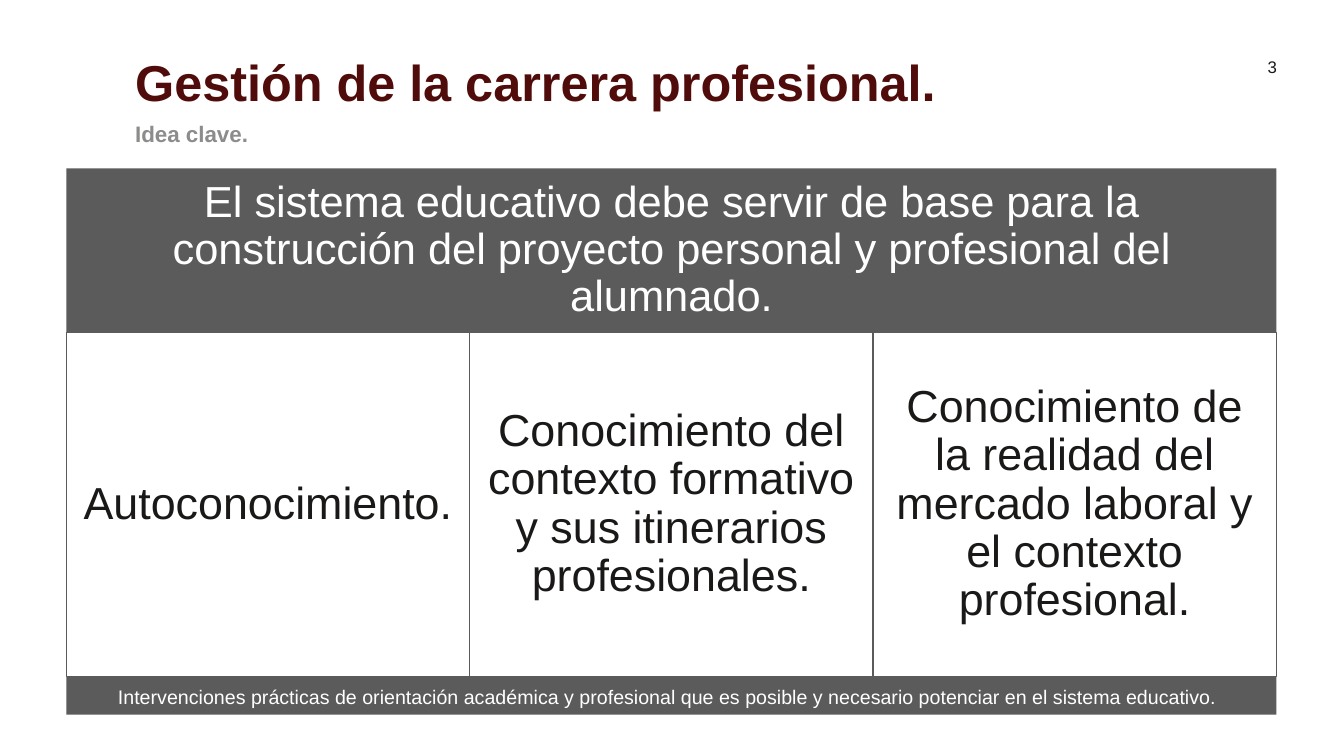
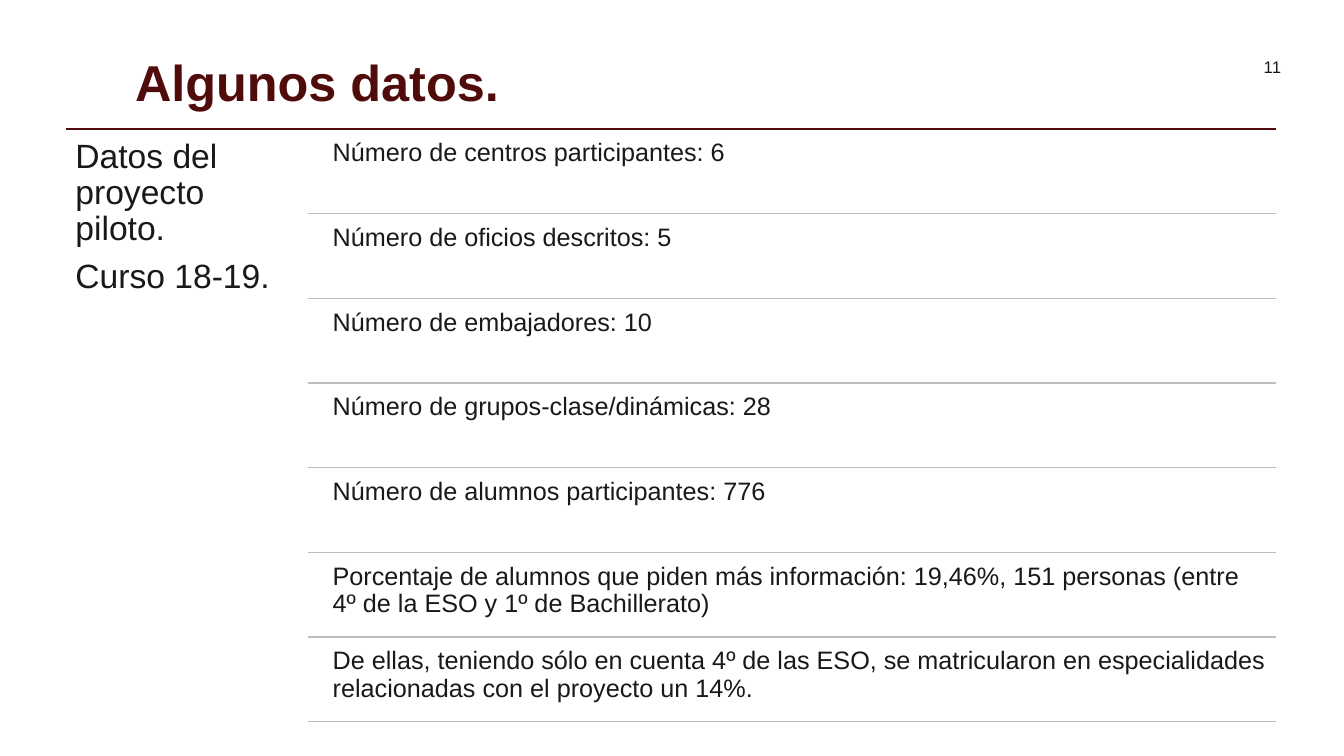
from pptx import Presentation
from pptx.dml.color import RGBColor
from pptx.enum.shapes import MSO_CONNECTOR, MSO_SHAPE
from pptx.enum.text import MSO_ANCHOR, PP_ALIGN
from pptx.util import Inches, Pt
from lxml import etree

RECTANGLE = MSO_SHAPE.RECTANGLE
STRAIGHT = MSO_CONNECTOR.STRAIGHT
TOP, MIDDLE = MSO_ANCHOR.TOP, MSO_ANCHOR.MIDDLE
LEFT, CENTER = PP_ALIGN.LEFT, PP_ALIGN.CENTER
DRAWING = "{http://schemas.openxmlformats.org/drawingml/2006/main}"

FONT = "Arial"
COLORS = {
    "maroon": "500C0A",
    "ink": "1A1918",
    "muted": "8C8C8B",
    "band": "5B5B5B",
    "rule": "C2BDBD",
    "white": "FFFFFF",
}
TITLE_STYLE = {"size": 36, "color": "maroon", "bold": True, "inset": (0, 0.05)}
SUBTITLE_STYLE = {"size": 16, "color": "muted", "bold": True, "inset": (0, 0.04)}
NUMBER_STYLE = {"size": 12, "align": CENTER, "anchor": MIDDLE, "inset": (0, 0), "spacing": 1}
PANEL_STYLE = {"size": 32, "align": CENTER, "anchor": MIDDLE, "inset": (0.13, 0.13)}
BAND_STYLE = {**PANEL_STYLE, "size": 31, "color": "white"}
FOOTER_STYLE = {"size": 14, "color": "white", "inset": (0, 0), "spacing": 1}
TOPIC_STYLE = {"size": 24, "inset": (0.1, 0.1), "after": 8.4}
FACT_STYLE = {"size": 18, "inset": (0.07, 0.07)}

PILLARS = [
    "Autoconocimiento.",
    "Conocimiento del contexto formativo y sus itinerarios profesionales.",
    "Conocimiento de la realidad del mercado laboral y el contexto profesional.",
]
FACTS = [
    "Número de centros participantes: 6",
    "Número de oficios descritos: 5",
    "Número de embajadores: 10",
    "Número de grupos-clase/dinámicas: 28",
    "Número de alumnos participantes: 776",
    "Porcentaje de alumnos que piden más información: 19,46%, 151 personas "
    "(entre 4º de la ESO y 1º de Bachillerato)",
    "De ellas, teniendo sólo en cuenta 4º de las ESO, se matricularon en "
    "especialidades relacionadas con el proyecto un 14%.",
]


def rgb(name):
    """Return the named colour."""
    return RGBColor.from_string(COLORS[name])


def write(shape, lines, size, color="ink", bold=False, align=LEFT, anchor=TOP,
          inset=(0, 0), spacing=0.9, after=0):
    """Fill a shape with one paragraph per line of text."""
    frame = shape.text_frame
    across, down = (Inches(length) for length in inset)
    frame_format = {
        "word_wrap": True, "vertical_anchor": anchor,
        "margin_left": across, "margin_right": across,
        "margin_top": down, "margin_bottom": down,
    }
    for name, value in frame_format.items():
        setattr(frame, name, value)
    for index, line in enumerate(lines):
        para = frame.paragraphs[0] if index == 0 else frame.add_paragraph()
        span = para.add_run()
        span.text = line
        para_format = {"alignment": align, "line_spacing": spacing, "space_after": Pt(after)}
        for name, value in para_format.items():
            setattr(para, name, value)
        for name, value in {"name": FONT, "size": Pt(size), "bold": bold}.items():
            setattr(span.font, name, value)
        span.font.color.rgb = rgb(color)


def add_text(page, box, *lines, **style):
    """Place a text box."""
    write(page.shapes.add_textbox(*map(Inches, box)), lines, **style)


def add_panel(page, box, fill, line=None, text=None, style=None):
    """Place a filled rectangle, with an outline and text if given."""
    panel = page.shapes.add_shape(RECTANGLE, *map(Inches, box))
    panel.shadow.inherit = False
    panel.fill.solid()
    panel.fill.fore_color.rgb = rgb(fill)
    if line:
        panel.line.color.rgb = rgb(line)
        panel.line.width = Pt(1)
    else:
        panel.line.fill.background()
    if text:
        write(panel, [text], **style)


def add_rule(page, left, top, width, color):
    """Draw a horizontal line."""
    rule = page.shapes.add_connector(
        STRAIGHT, Inches(left), Inches(top), Inches(left + width), Inches(top))
    rule.line.color.rgb = rgb(color)
    rule.line.width = Pt(1)
    etree.SubElement(rule.line._get_or_add_ln().getparent(), DRAWING + "effectLst")


def add_page(deck, title, number):
    """Add a blank slide with its title and page number."""
    page = deck.slides.add_slide(deck.slide_layouts[6])
    add_text(page, (12.42, 0.55, 0.4, 0.22), number, **NUMBER_STYLE)
    add_text(page, (1.34, 0.53, 10.63, 0.65), title, **TITLE_STYLE)
    return page


def add_pillars(page, box):
    """Build a headline band, equal columns and a closing band."""
    left, top, width, height = box
    head, foot = 1.63, 0.38
    body = height - head - foot
    column = width / len(PILLARS)
    add_panel(page, (left, top, width, head), "band", style=BAND_STYLE,
              text="El sistema educativo debe servir de base para la construcción "
                   "del proyecto personal y profesional del alumnado.")
    for index, text in enumerate(PILLARS):
        add_panel(page, (left + index * column, top + head, column, body),
                  "white", "band", text, PANEL_STYLE)
    base = top + head + body
    add_panel(page, (left, base, width, foot), "band")
    add_text(page, (left + 0.51, base + 0.08, width - 1.04, 0.25),
             "Intervenciones prácticas de orientación académica y profesional que es "
             "posible y necesario potenciar en el sistema educativo.", **FOOTER_STYLE)


def add_facts(page, box):
    """Build a topic on the left and ruled rows of facts on the right."""
    left, top, width, height = box
    topic, gap, indent = 2.4, 0.04, 0.18
    step = 0.84
    add_rule(page, left, top, width, "maroon")
    add_text(page, (left, top, topic, height),
             "Datos del proyecto piloto.", "Curso 18-19.", **TOPIC_STYLE)
    for index, fact in enumerate(FACTS):
        row = top + gap + index * step
        add_text(page, (left + topic + indent, row, width - topic - indent, step - gap),
                 fact, **FACT_STYLE)
        add_rule(page, left + topic, row + step - gap, width - topic, "rule")


def main():
    """Build and save the deck."""
    deck = Presentation()
    deck.slide_width, deck.slide_height = Inches(13.33), Inches(7.5)
    page = add_page(deck, "Gestión de la carrera profesional.", "3")
    add_text(page, (1.34, 1.18, 10.63, 0.4), "Idea clave.", **SUBTITLE_STYLE)
    add_pillars(page, (0.66, 1.67, 12, 5.42))
    page = add_page(deck, "Algunos datos.", "11")
    add_facts(page, (0.65, 1.28, 12.01, 5.93))
    deck.save("out.pptx")


if __name__ == "__main__":
    main()
